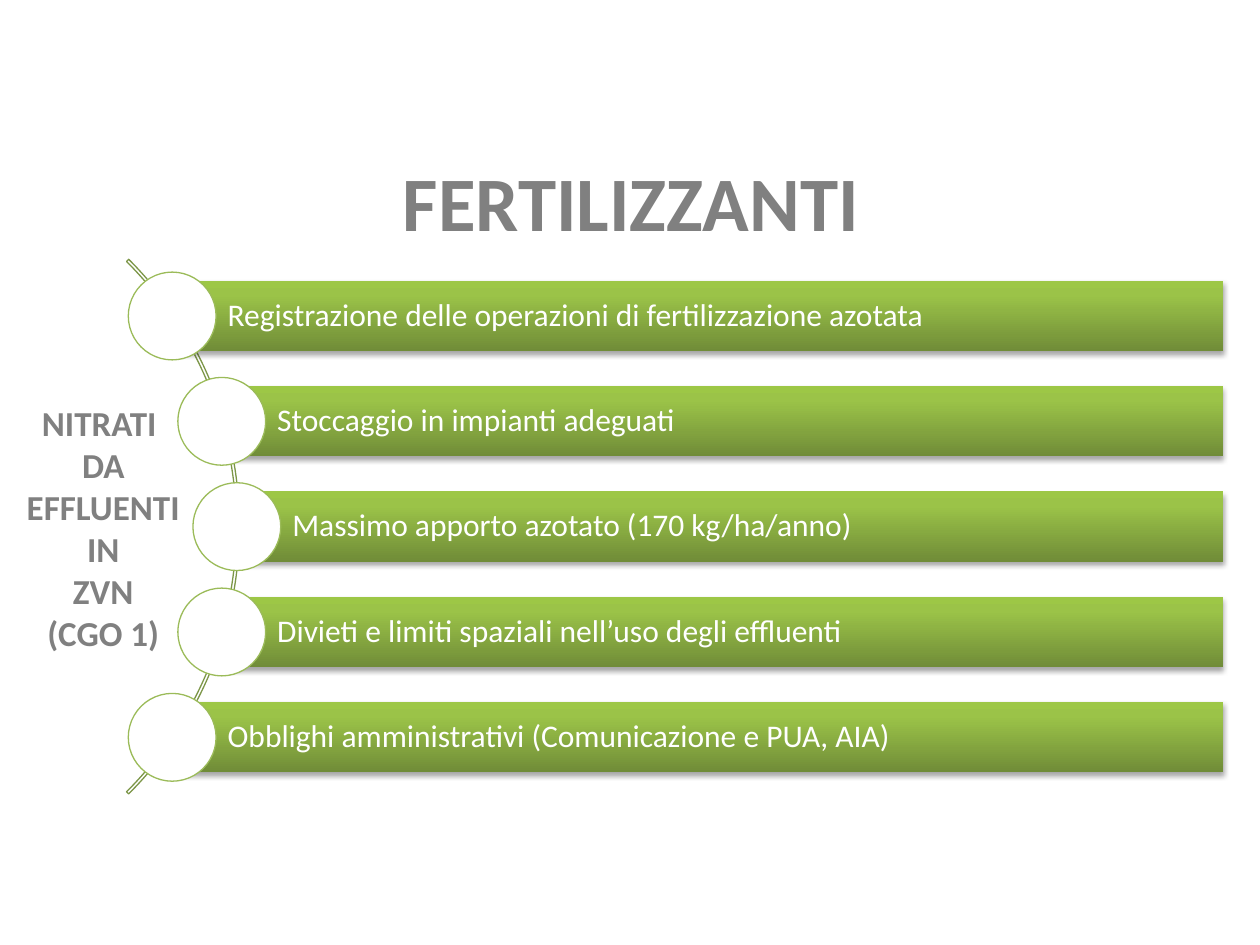
import copy
import math

import lxml.etree
import pptx
import pptx.dml.color
import pptx.enum.shapes
import pptx.enum.text
import pptx.oxml
import pptx.oxml.ns
import pptx.util

RGBColor = pptx.dml.color.RGBColor
MSO_SHAPE = pptx.enum.shapes.MSO_SHAPE
PP_ALIGN = pptx.enum.text.PP_ALIGN
qn = pptx.oxml.ns.qn

GREY = RGBColor(0x80, 0x80, 0x80)
WHITE = RGBColor(0xFF, 0xFF, 0xFF)
ARC_GREEN = RGBColor(0x7C, 0x96, 0x47)
DISC_GREEN = RGBColor(0x9B, 0xBB, 0x59)
BAR_STOPS = [
    (0, RGBColor(0x70, 0x8C, 0x38)),
    (0.8, RGBColor(0x9B, 0xC3, 0x48)),
    (1, RGBColor(0x9D, 0xC7, 0x46)),
]

# The slide is a grid of 100 columns by 75 rows of square cells.
CELL = pptx.util.Inches(0.1)
COLUMNS, ROWS = 100, 75

TITLE_FORMAT = {"size": pptx.util.Pt(44), "bold": True, "color": GREY}
LABEL_FORMAT = {"size": pptx.util.Pt(20), "bold": True, "color": GREY}
BAR_FORMAT = {"size": pptx.util.Pt(18), "bold": False, "color": WHITE}

DUTIES = [
    "Registrazione delle operazioni di fertilizzazione azotata",
    "Stoccaggio in impianti adeguati",
    "Massimo apporto azotato (170 kg/ha/anno)",
    "Divieti e limiti spaziali nell’uso degli effluenti",
    "Obblighi amministrativi (Comunicazione e PUA, AIA)",
]
LABEL_LINES = ["NITRATI ", "DA EFFLUENTI", "IN", "ZVN", "(CGO 1)"]


def cells(*lengths):
    return [round(length * CELL) for length in lengths]


def write_text(shape, lines, text_format, alignment, line_spacing):
    frame = shape.text_frame
    frame.word_wrap = True
    frame.vertical_anchor = pptx.enum.text.MSO_ANCHOR.MIDDLE
    for index, line in enumerate(lines):
        paragraph = frame.paragraphs[0] if index == 0 else frame.add_paragraph()
        paragraph.alignment = alignment
        paragraph.line_spacing = line_spacing
        run = paragraph.add_run()
        run.text = line
        run.font.name = "Calibri"
        for name, value in text_format.items():
            if name == "color":
                run.font.color.rgb = value
            else:
                setattr(run.font, name, value)


def add_text(slide, box, lines, text_format, line_spacing=1.0):
    shape = slide.shapes.add_textbox(*cells(*box))
    write_text(shape, lines, text_format, PP_ALIGN.CENTER, line_spacing)


def add_outlined(slide, kind, box, line_color):
    shape = slide.shapes.add_shape(kind, *cells(*box))
    shape.shadow.inherit = False
    shape.line.color.rgb = line_color
    shape.line.width = pptx.util.Pt(0.75)
    return shape


def fill_with_gradient(shape):
    """Blend the bar colours from the bottom edge to the top."""
    shape.fill.gradient()
    shape.fill.gradient_angle = 90
    stop_list = shape.element.spPr.find(".//" + qn("a:gsLst"))
    stop_list.append(copy.deepcopy(stop_list[-1]))
    for stop, (position, color) in zip(shape.fill.gradient_stops, BAR_STOPS):
        stop.position = position
        stop.color.rgb = color


def add_drop_shadow(shape):
    shape.shadow.inherit = False
    effects = shape.element.spPr.find(qn("a:effectLst"))
    shadow = lxml.etree.SubElement(
        effects, qn("a:outerShdw"), blurRad=str(pptx.util.Pt(3.1)),
        dist=str(pptx.util.Pt(1.8)), dir="5400000", rotWithShape="0")
    color = lxml.etree.SubElement(shadow, qn("a:srgbClr"), val="000000")
    lxml.etree.SubElement(color, qn("a:alpha"), val="35000")


def add_bar(slide, box, text):
    bar = slide.shapes.add_shape(MSO_SHAPE.RECTANGLE, *cells(*box))
    fill_with_gradient(bar)
    bar.line.fill.background()
    add_drop_shadow(bar)
    insets = {"left": 4.4, "top": 0.5, "right": 0.5, "bottom": 0.5}
    for side, inset in insets.items():
        setattr(bar.text_frame, "margin_" + side, cells(inset)[0])
    write_text(bar, [text], BAR_FORMAT, PP_ALIGN.LEFT, 0.9)


def add_arc_list(slide, box, duties):
    """Place bars in equal rows, each starting at a disc on a shared arc."""
    left, top, width, height = box
    pitch = height / len(duties)
    bar_height, disc_size = pitch * 2 / 3, pitch * 5 / 6
    center_x, center_y = left - 21.1, top + height / 2
    radius = 30

    arc = add_outlined(
        slide, MSO_SHAPE.BLOCK_ARC,
        (center_x - radius, center_y - radius, 2 * radius, 2 * radius),
        ARC_GREEN)
    arc.fill.background()
    for index, value in enumerate((189, 27, 0.004)):
        arc.adjustments[index] = value

    for index, duty in enumerate(duties):
        y = top + (index + 0.5) * pitch
        x = center_x + math.sqrt((radius - 0.2) ** 2 - (y - center_y) ** 2)
        add_bar(slide, (x, y - bar_height / 2, left + width - x, bar_height), duty)
        disc = add_outlined(
            slide, MSO_SHAPE.OVAL,
            (x - disc_size / 2, y - disc_size / 2, disc_size, disc_size),
            DISC_GREEN)
        disc.fill.solid()
        disc.fill.fore_color.rgb = WHITE


def main():
    presentation = pptx.Presentation()
    presentation.slide_width, presentation.slide_height = cells(COLUMNS, ROWS)
    slide = presentation.slides.add_slide(presentation.slide_layouts[6])
    add_text(slide, (5.1, 8.2, 90, 11.8), ["FERTILIZZANTI"], TITLE_FORMAT, 1.5)
    add_arc_list(slide, (10.1, 20.9, 87, 41.8), DUTIES)
    add_text(slide, (0, 30.5, 16.4, 22.7), LABEL_LINES, LABEL_FORMAT)
    presentation.save("out.pptx")


if __name__ == "__main__":
    main()
